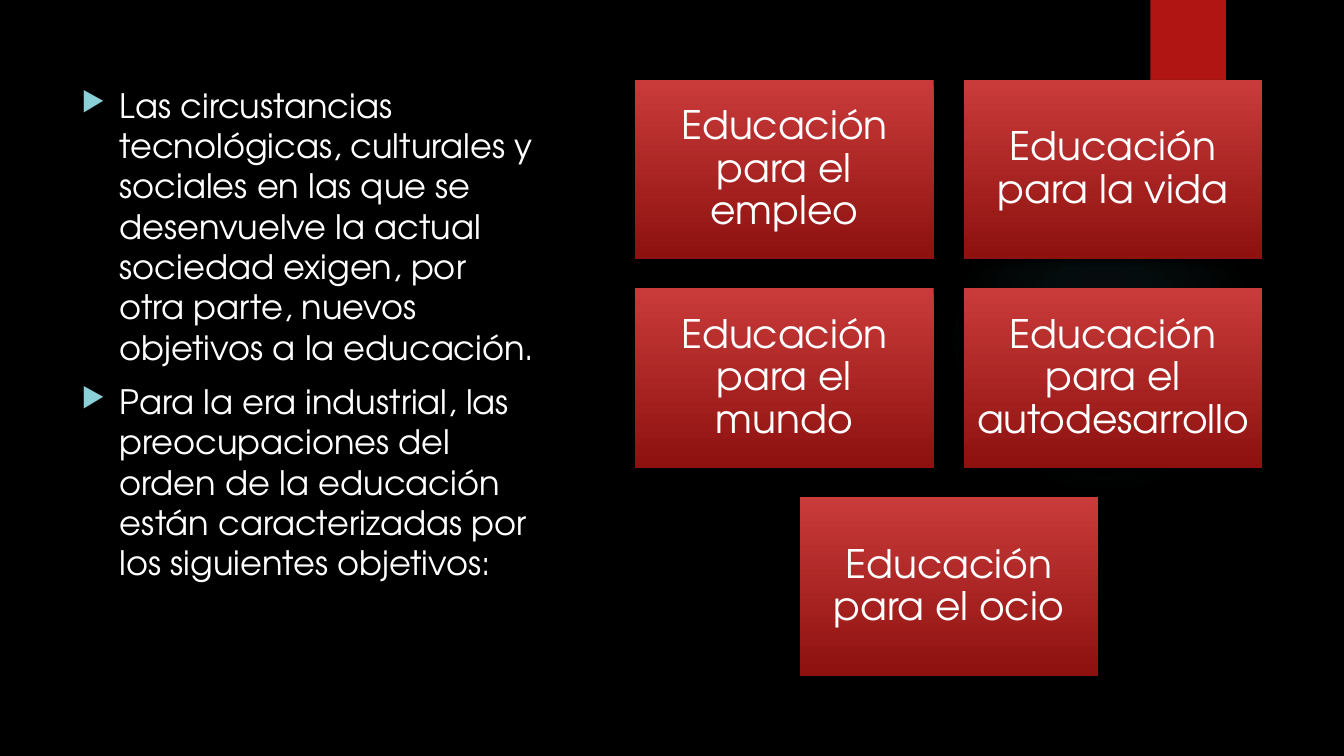
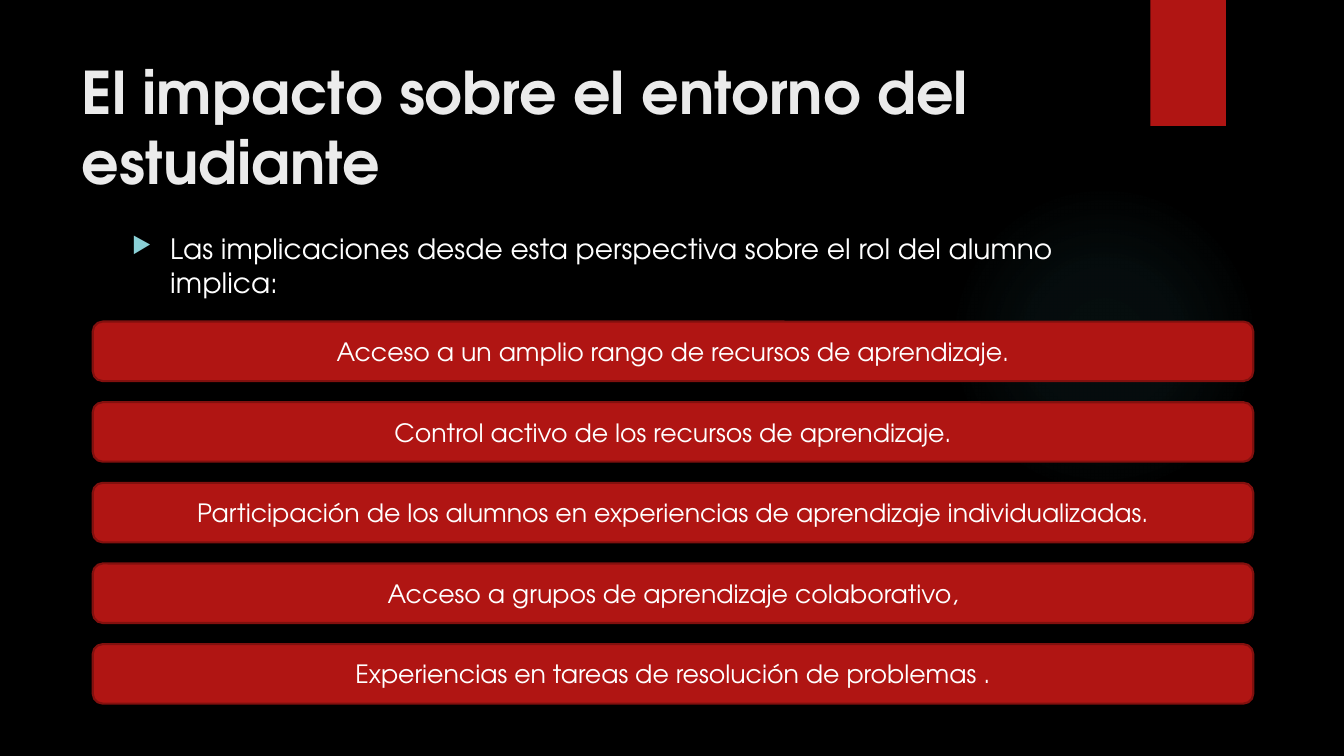
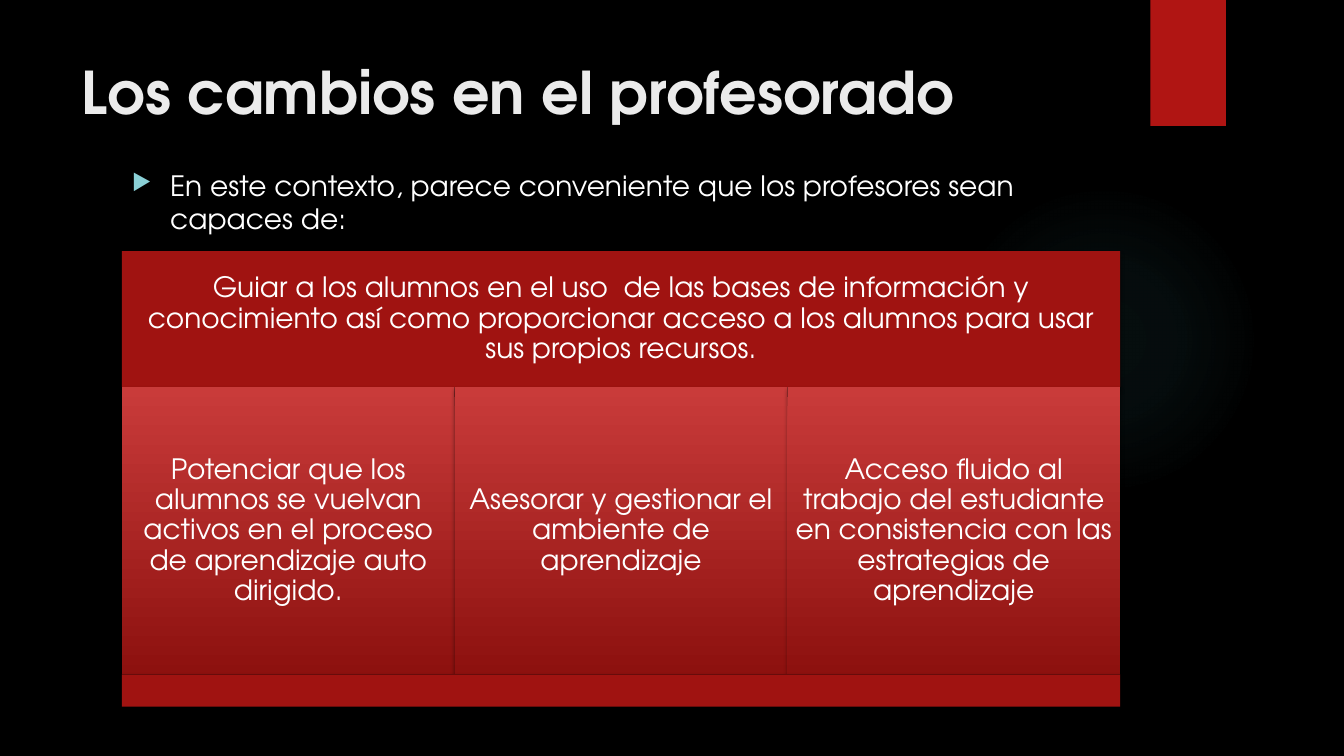
from dataclasses import dataclass
from typing import NamedTuple, Optional

from lxml.etree import SubElement
from pptx import Presentation
from pptx.dml.color import RGBColor
from pptx.enum.shapes import MSO_SHAPE as SHAPE
from pptx.enum.text import MSO_ANCHOR as ANCHOR, MSO_AUTO_SIZE as AUTO_SIZE, PP_ALIGN as ALIGN
from pptx.oxml import parse_xml
from pptx.oxml.ns import nsdecls, qn
from pptx.util import Inches, Pt

FONT = "TeX Gyre Adventor"
BLACK = RGBColor(0x00, 0x00, 0x00)
WHITE = RGBColor(0xFF, 0xFF, 0xFF)
TITLE_GREY = RGBColor(0xEB, 0xEB, 0xEB)
BULLET_BLUE = RGBColor(0x8A, 0xD0, 0xD6)
GLOW_TEAL = RGBColor(0x50, 0xB9, 0xC1)
RED = RGBColor(0xB0, 0x15, 0x13)
EDGE_RED = RGBColor(0x82, 0x10, 0x0E)
BAND_RED = RGBColor(0xA0, 0x13, 0x11)
GRADIENT_REDS = (RGBColor(0xC9, 0x3B, 0x3A), RGBColor(0x8D, 0x11, 0x0F))
GLOW_STOPS = ((0, 7), (36, 6), (69, 0))  # position and opacity, in percent
TITLE_ONLY, BLANK = 5, 6


class Box(NamedTuple):
    left: float
    top: float
    width: float
    height: float

    def emu(self) -> tuple:
        return tuple(Inches(v) for v in self)


@dataclass(frozen=True)
class Grid:
    """Equal cells with equal gaps, starting at left, top."""
    left: float
    top: float
    width: float
    height: float
    gap_x: float = 0
    gap_y: float = 0

    def cell(self, col: float, row: float) -> Box:
        return Box(self.left + col * (self.width + self.gap_x),
                   self.top + row * (self.height + self.gap_y),
                   self.width, self.height)


@dataclass(frozen=True)
class Look:
    """Style of a filled panel; fill is one colour or a pair for a gradient."""
    fill: object
    size: int = 20
    shape: int = SHAPE.RECTANGLE
    edge: Optional[RGBColor] = None
    shadow: bool = True
    inset: Optional[float] = None
    spacing: float = 1.0


TAB = Look(RED)
CARD = Look(GRADIENT_REDS, size=28, inset=0.12, spacing=0.9)
BAR = Look(RED, size=18, shape=SHAPE.ROUNDED_RECTANGLE, edge=EDGE_RED, shadow=False)
BAND = Look(BAND_RED, inset=0.08, spacing=0.9)
COLUMN = Look(GRADIENT_REDS, inset=0.08, spacing=0.9)

TITLE_BOX = Box(0.71, 0.5, 10.29, 1.53)
GLOW_BOX = Box(9.41, 1.83, 3.08, 3.08)
TAB_BOX = Box(11.41, 0, 0.75, 1.25)

GOAL_GRID = Grid(6.3, 0.79, 2.96, 1.78, gap_x=0.3, gap_y=0.29)
GOALS = (
    ("Educación para el empleo", 0, 0),
    ("Educación para la vida", 1, 0),
    ("Educación para el mundo", 0, 1),
    ("Educación para el autodesarrollo", 1, 1),
    ("Educación para el ocio", 0.5, 2),
)
BAR_GRID = Grid(0.92, 3.19, 11.51, 0.59, gap_y=0.21)
STUDENT_IMPACTS = (
    "Acceso a un amplio rango de recursos de aprendizaje.",
    "Control activo de los recursos de aprendizaje.",
    "Participación de los alumnos en experiencias de aprendizaje individualizadas.",
    "Acceso a grupos de aprendizaje colaborativo,",
    "Experiencias en tareas de resolución de problemas .",
)
COLUMN_GRID = Grid(1.21, 3.84, 3.3, 2.85)
TEACHER_SKILLS = (
    "Potenciar que los alumnos se vuelvan activos en el proceso de aprendizaje auto dirigido.",
    "Asesorar y gestionar el ambiente de aprendizaje",
    "Acceso fluido al trabajo del estudiante en consistencia con las estrategias "
    "de aprendizaje",
)


def format_paragraph(p, text: str, *, size: int, color: RGBColor = WHITE, bold: bool = False,
                     align=ALIGN.LEFT, spacing: float = 1.0, before: float = 0) -> None:
    p.alignment, p.line_spacing, p.space_before = align, spacing, Pt(before)
    r = p.add_run()
    r.text = text
    r.font.name, r.font.size, r.font.bold = FONT, Pt(size), bold
    r.font.color.rgb = color


def add_drop_shadow(sp) -> None:
    effects = sp.element.spPr.find(qn("a:effectLst"))
    shadow = SubElement(effects, qn("a:outerShdw"), blurRad=str(Pt(3)), dist=str(Pt(2)),
                        dir="5400000", rotWithShape="0")
    color = SubElement(shadow, qn("a:srgbClr"), val=str(BLACK))
    SubElement(color, qn("a:alpha"), val="45000")


def add_panel(slide, box: Box, look: Look, text: str = "") -> None:
    sp = slide.shapes.add_shape(look.shape, *box.emu())
    sp.shadow.inherit = False
    if isinstance(look.fill, RGBColor):
        sp.fill.solid()
        sp.fill.fore_color.rgb = look.fill
    else:
        sp.fill.gradient()
        sp.fill.gradient_angle = 270
        for stop, color in zip(sp.fill.gradient_stops, look.fill):
            stop.color.rgb = color
    if look.edge is None:
        sp.line.fill.background()
    else:
        sp.line.color.rgb = look.edge
        sp.line.width = Pt(1.5)
    if look.shadow:
        add_drop_shadow(sp)
    if text:
        tf = sp.text_frame
        tf.word_wrap, tf.vertical_anchor = True, ANCHOR.MIDDLE
        if look.inset is not None:
            tf.margin_left = tf.margin_right = Inches(look.inset)
            tf.margin_top = tf.margin_bottom = Inches(look.inset)
        format_paragraph(tf.paragraphs[0], text, size=look.size, align=ALIGN.CENTER,
                         spacing=look.spacing)


def add_glow(slide) -> None:
    sp = slide.shapes.add_shape(SHAPE.OVAL, *GLOW_BOX.emu())
    sp.shadow.inherit = False
    sp.line.fill.background()
    sp.fill.solid()
    stops = "".join(
        f'<a:gs pos="{pos * 1000}"><a:srgbClr val="{GLOW_TEAL}">'
        f'<a:alpha val="{opacity * 1000}"/></a:srgbClr></a:gs>'
        for pos, opacity in GLOW_STOPS)
    gradient = parse_xml(
        f'<a:gradFill {nsdecls("a")} rotWithShape="1"><a:gsLst>{stops}</a:gsLst>'
        '<a:path path="circle"><a:fillToRect l="50000" t="50000" r="50000" b="50000"/>'
        '</a:path></a:gradFill>')
    sp_pr = sp.element.spPr
    sp_pr.replace(sp_pr.find(qn("a:solidFill")), gradient)


def add_bullets(slide, box: Box, *texts: str, size: int = 20) -> None:
    tf = slide.shapes.add_textbox(*box.emu()).text_frame
    tf.word_wrap = True
    for i, text in enumerate(texts):
        p = tf.add_paragraph() if i else tf.paragraphs[0]
        p_pr = p._p.get_or_add_pPr()
        p_pr.set("marL", str(Inches(0.38)))
        p_pr.set("indent", str(Inches(-0.38)))
        color = SubElement(p_pr, qn("a:buClr"))
        SubElement(color, qn("a:srgbClr"), val=str(BULLET_BLUE))
        SubElement(p_pr, qn("a:buSzPct"), val="80000")
        SubElement(p_pr, qn("a:buChar"), char="▶")
        format_paragraph(p, text, size=size, before=10 if i else 0)


def new_slide(prs, title: str = ""):
    """Add a slide with the shared glow and tab, and a title if one is given."""
    slide = prs.slides.add_slide(prs.slide_layouts[TITLE_ONLY if title else BLANK])
    add_glow(slide)
    add_panel(slide, TAB_BOX, TAB)
    if title:
        sp = slide.shapes.title
        sp.left, sp.top, sp.width, sp.height = TITLE_BOX.emu()
        tf = sp.text_frame
        tf.word_wrap, tf.vertical_anchor, tf.auto_size = True, ANCHOR.TOP, AUTO_SIZE.NONE
        format_paragraph(tf.paragraphs[0], title, size=42, color=TITLE_GREY, bold=True)
    return slide


def build_goals(prs) -> None:
    slide = new_slide(prs)
    add_bullets(
        slide, Box(0.71, 0.79, 4.69, 6.22),
        "Las circustancias tecnológicas, culturales y sociales en las que se desenvuelve "
        "la actual sociedad exigen, por otra parte, nuevos objetivos a la educación.",
        "Para la era industrial, las preocupaciones del orden de la educación están "
        "caracterizadas por los siguientes objetivos:",
        size=24)
    for text, col, row in GOALS:
        add_panel(slide, GOAL_GRID.cell(col, row), CARD, text)


def build_student_impact(prs) -> None:
    slide = new_slide(prs, "El impacto sobre el entorno del estudiante")
    add_bullets(slide, Box(1.21, 2.25, 9.78, 4.59),
                "Las implicaciones desde esta perspectiva sobre el rol del alumno implica:")
    for row, text in enumerate(STUDENT_IMPACTS):
        add_panel(slide, BAR_GRID.cell(0, row), BAR, text)


def build_teacher_changes(prs) -> None:
    slide = new_slide(prs, "Los cambios en el profesorado")
    add_bullets(slide, Box(1.21, 1.62, 9.78, 4.59),
                "En este contexto, parece conveniente que los profesores sean capaces de:")
    grid = COLUMN_GRID
    band_width = len(TEACHER_SKILLS) * grid.width
    add_panel(slide, Box(grid.left, 2.49, band_width, grid.top - 2.49), BAND,
              "Guiar a los alumnos en el uso  de las bases de información y conocimiento así "
              "como proporcionar acceso a los alumnos para usar sus propios recursos.")
    for col, text in enumerate(TEACHER_SKILLS):
        add_panel(slide, grid.cell(col, 0), COLUMN, text)
    add_panel(slide, Box(grid.left, grid.top + grid.height, band_width, 0.32), BAND)


def main() -> None:
    prs = Presentation()
    prs.slide_width, prs.slide_height = Inches(13.33), Inches(7.5)
    background = prs.slide_master.background.fill
    background.solid()
    background.fore_color.rgb = BLACK
    build_goals(prs)
    build_student_impact(prs)
    build_teacher_changes(prs)
    prs.save("out.pptx")


if __name__ == "__main__":
    main()
